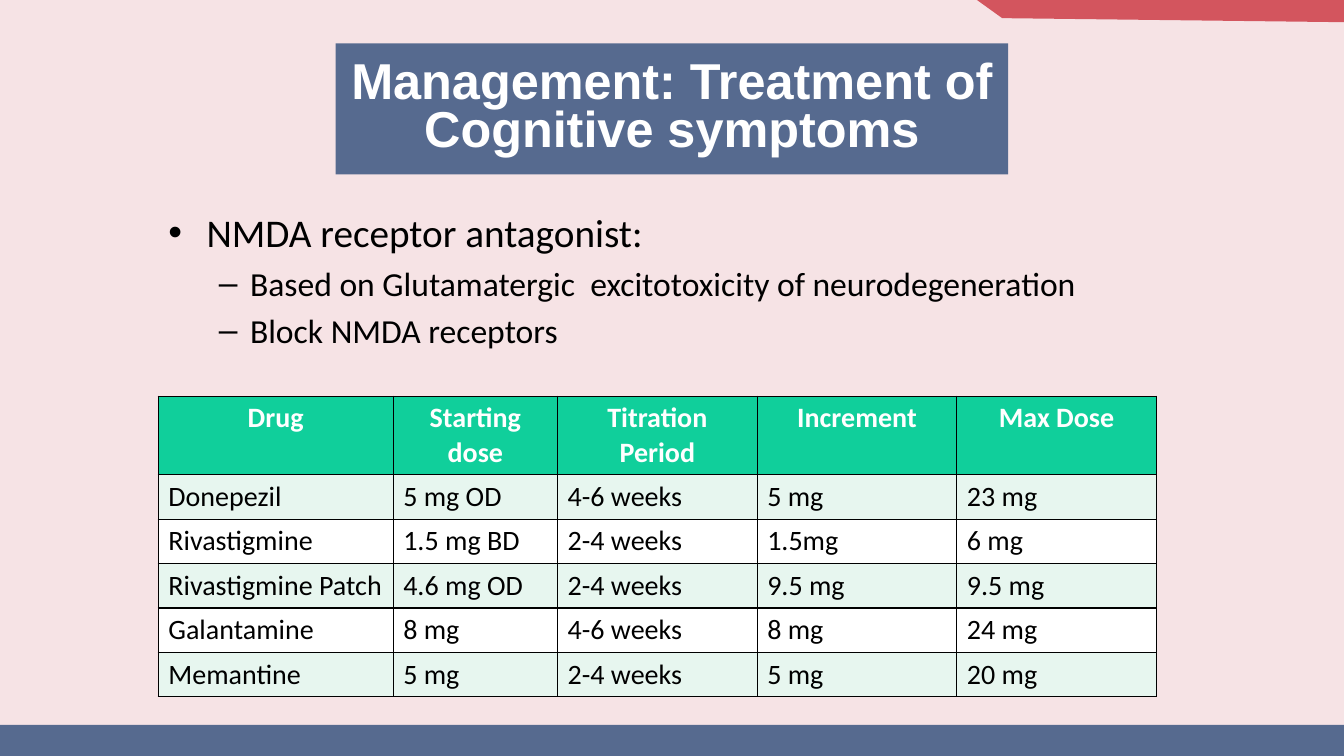
from lxml import etree
from pptx import Presentation
from pptx.dml.color import RGBColor
from pptx.enum import shapes, text
from pptx.oxml import ns
from pptx.util import Inches, Pt

PINK = RGBColor(0xF6, 0xE3, 0xE5)
SLATE = RGBColor(0x56, 0x6A, 0x8F)
RED = RGBColor(0xD3, 0x55, 0x5E)
GREEN = RGBColor(0x10, 0xCF, 0x9B)
MINT = RGBColor(0xE7, 0xF6, 0xEF)
WHITE = RGBColor(0xFF, 0xFF, 0xFF)
BLACK = RGBColor(0, 0, 0)

TITLE = "Management: Treatment of Cognitive symptoms"
BULLETS = [
    (0, "NMDA receptor antagonist:"),
    (1, "Based on Glutamatergic  excitotoxicity of neurodegeneration"),
    (1, "Block NMDA receptors"),
]
BULLET_LEVELS = [
    {"size": 28, "mark": "•", "left": 0.38, "hang": 0.38},
    {"size": 24, "mark": "–", "left": 0.81, "hang": 0.31},
]
DRUGS = [
    ("Drug", "Starting dose", "Titration Period", "Increment", "Max Dose"),
    ("Donepezil", "5 mg OD", "4-6 weeks", "5 mg", "23 mg"),
    ("Rivastigmine", "1.5 mg BD", "2-4 weeks", "1.5mg", "6 mg"),
    ("Rivastigmine Patch", "4.6 mg OD", "2-4 weeks", "9.5 mg", "9.5 mg"),
    ("Galantamine", "8 mg", "4-6 weeks", "8 mg", "24 mg"),
    ("Memantine", "5 mg", "2-4 weeks", "5 mg", "20 mg"),
]
COLUMN_WIDTHS = [2.33, 1.63, 1.98, 1.98, 1.98]
HEADER_HEIGHT, ROW_HEIGHT = 0.78, 0.44
CORNER = [(9.69, 0), (13.33, 0), (13.33, 0.22), (9.94, 0.18)]


def add_child(parent, tag, **attributes):
    return etree.SubElement(parent, ns.qn(tag), attributes)


def place(shape, left, top, width, height):
    shape.left, shape.top = Inches(left), Inches(top)
    shape.width, shape.height = Inches(width), Inches(height)


def paint(shape, color):
    shape.fill.solid()
    shape.fill.fore_color.rgb = color
    shape.line.fill.background()
    shape.shadow.inherit = False


def style(paragraph, name, size, color, bold=False):
    for run in paragraph.runs:
        run.font.name, run.font.size, run.font.bold = name, Pt(size), bold
        run.font.color.rgb = color


def add_decoration(slide):
    slide.background.fill.solid()
    slide.background.fill.fore_color.rgb = PINK
    footer = slide.shapes.add_shape(
        shapes.MSO_SHAPE.RECTANGLE, 0, Inches(7.19), Inches(13.33), Inches(0.31))
    paint(footer, SLATE)
    start, *rest = [(Inches(x), Inches(y)) for x, y in CORNER]
    builder = slide.shapes.build_freeform(*start)
    builder.add_line_segments(rest)
    paint(builder.convert_to_shape(), RED)


def fill_title(title):
    place(title, 3.33, 0.43, 6.67, 1.3)
    geometry = add_child(title._element.spPr, "a:prstGeom", prst="roundRect")
    guides = add_child(geometry, "a:avLst")
    add_child(guides, "a:gd", name="adj", fmla="val 30200")
    title.fill.solid()
    title.fill.fore_color.rgb = SLATE
    frame = title.text_frame
    frame.text = TITLE
    frame.auto_size = text.MSO_AUTO_SIZE.NONE
    frame.vertical_anchor = text.MSO_ANCHOR.MIDDLE
    paragraph = frame.paragraphs[0]
    paragraph.alignment = text.PP_ALIGN.CENTER
    paragraph.line_spacing = 0.8
    style(paragraph, "Arial", 36, WHITE, True)


def fill_body(body):
    place(body, 1.57, 2.02, 9.25, 1.92)
    frame = body.text_frame
    frame.text = "\n".join(line for level, line in BULLETS)
    frame.auto_size = text.MSO_AUTO_SIZE.NONE
    for index, (level, line) in enumerate(BULLETS):
        look = BULLET_LEVELS[level]
        paragraph = frame.paragraphs[index]
        paragraph.level = level
        paragraph.space_before = Pt(0.2 * look["size"] if index else 0)
        properties = paragraph._p.get_or_add_pPr()
        properties.set("marL", str(Inches(look["left"])))
        properties.set("indent", str(-Inches(look["hang"])))
        add_child(properties, "a:buChar", char=look["mark"])
        style(paragraph, "Calibri", look["size"], BLACK)


def add_borders(cell):
    properties = cell._tc.get_or_add_tcPr()
    for side in "LRTB":
        line = add_child(properties, f"a:ln{side}", w=str(Pt(1)))
        add_child(add_child(line, "a:solidFill"), "a:srgbClr", val=str(BLACK))


def add_drug_table(slide):
    height = HEADER_HEIGHT + ROW_HEIGHT * (len(DRUGS) - 1)
    table = slide.shapes.add_table(
        len(DRUGS), len(COLUMN_WIDTHS), Inches(1.57), Inches(3.93),
        Inches(sum(COLUMN_WIDTHS)), Inches(height)).table
    table.horz_banding = False
    for column, width in zip(table.columns, COLUMN_WIDTHS):
        column.width = Inches(width)
    for row_index, values in enumerate(DRUGS):
        header = row_index == 0
        fill = GREEN if header else MINT if row_index % 2 else WHITE
        table.rows[row_index].height = Inches(HEADER_HEIGHT if header else ROW_HEIGHT)
        for cell, value in zip(table.rows[row_index].cells, values):
            add_borders(cell)
            cell.fill.solid()
            cell.fill.fore_color.rgb = fill
            cell.text_frame.text = value
            paragraph = cell.text_frame.paragraphs[0]
            paragraph.alignment = text.PP_ALIGN.CENTER if header else text.PP_ALIGN.LEFT
            style(paragraph, "Calibri", 20, WHITE if header else BLACK, header)


def main():
    presentation = Presentation()
    presentation.slide_width, presentation.slide_height = Inches(13.33), Inches(7.5)
    slide = presentation.slides.add_slide(presentation.slide_layouts[1])
    add_decoration(slide)
    fill_title(slide.shapes.title)
    fill_body(slide.placeholders[1])
    add_drug_table(slide)
    presentation.save("out.pptx")


if __name__ == "__main__":
    main()
